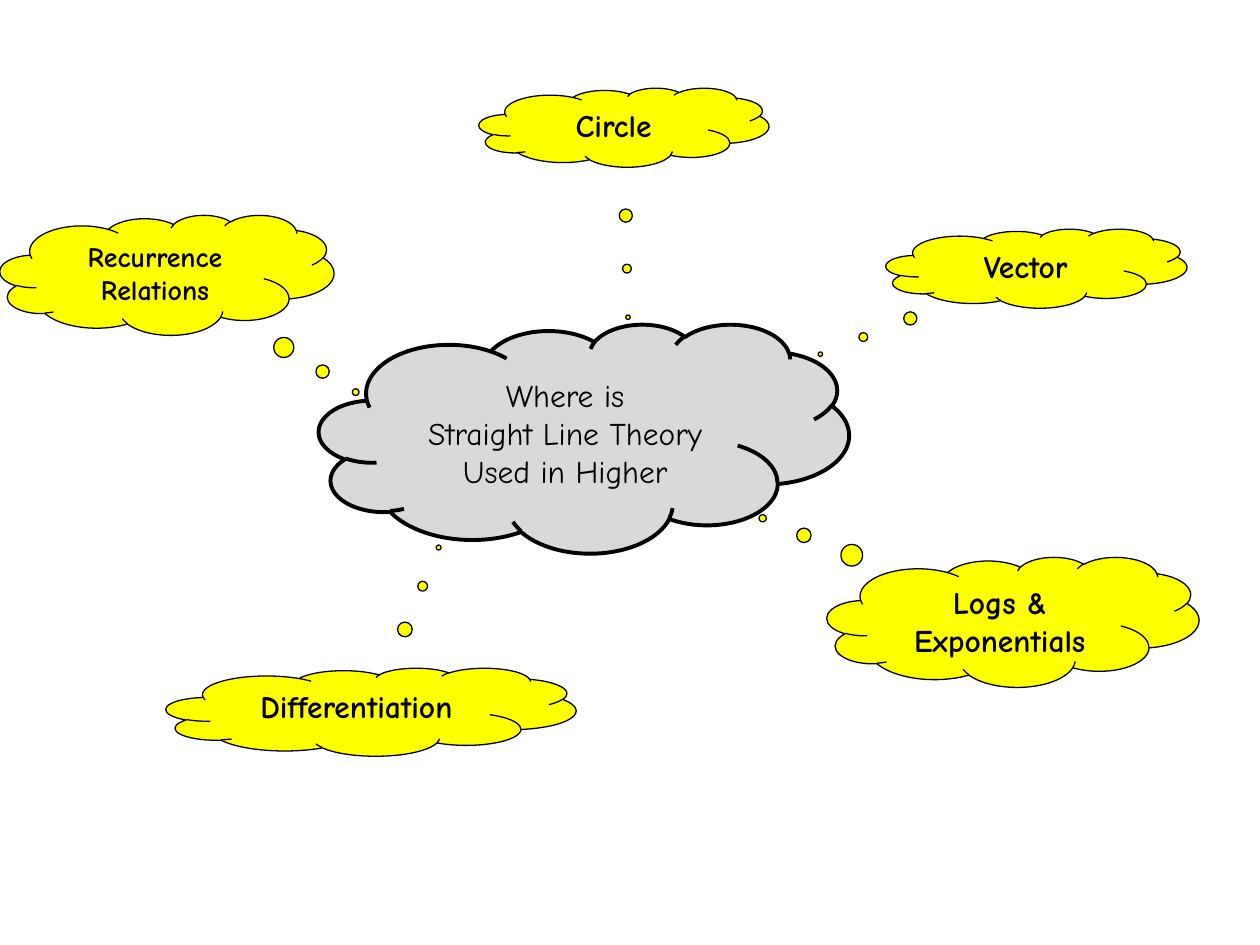
from pptx import Presentation
from pptx.dml.color import RGBColor
from pptx.enum.shapes import MSO_SHAPE
from pptx.enum.text import MSO_ANCHOR, PP_ALIGN
from pptx.util import Emu, Pt

PX = 914400 // 126
FONT = "Comic Neue"
COLORS = {"ink": "000000", "question": "D9D9D9", "topic": "FFFF00"}

QUESTION = ["Where is", "Straight Line Theory", "Used in Higher"]
QUESTION_BOX = (319, 324, 530, 229)

# Topic, box in px, tail end relative to the cloud's centre, text size
TOPICS = [
    ("Recurrence Relations", (0, 215, 334, 120), (0.565, 0.976), 16),
    ("Circle", (479, 88, 290, 79), (0.014, 2.401), 18),
    ("Differentiation", (166, 668, 410, 88), (0.165, -1.869), 18),
    ("Logs & Exponentials", (827, 557, 372, 130), (-0.673, -0.798), 18),
    ("Vector", (886, 229, 301, 79), (-0.718, 1.084), 18),
]


def color(name):
    return RGBColor.from_string(COLORS[name])


def add_cloud(slide, preset, box, lines, fill, line_width, size, bold, anchor):
    cloud = slide.shapes.add_shape(preset, *(Emu(v * PX) for v in box))
    cloud.shadow.inherit = False
    cloud.fill.solid()
    cloud.fill.fore_color.rgb = color(fill)
    cloud.line.color.rgb = color("ink")
    cloud.line.width = Pt(line_width)

    frame = cloud.text_frame
    frame.word_wrap = True
    frame.vertical_anchor = anchor
    for i, line in enumerate(lines):
        paragraph = frame.add_paragraph() if i else frame.paragraphs[0]
        paragraph.alignment = PP_ALIGN.CENTER
        run = paragraph.add_run()
        run.text = line
        run.font.name = FONT
        run.font.size = Pt(size)
        run.font.bold = bold
        run.font.color.rgb = color("ink")
    return cloud


def main():
    deck = Presentation()
    deck.slide_width, deck.slide_height = Emu(1260 * PX), Emu(945 * PX)
    slide = deck.slides.add_slide(deck.slide_layouts[6])

    # Central question
    add_cloud(slide, MSO_SHAPE.CLOUD, QUESTION_BOX, QUESTION, "question",
              2.25, 18, False, MSO_ANCHOR.MIDDLE)

    # Topics, each with a bubble trail to the question
    for topic, box, tail, size in TOPICS:
        cloud = add_cloud(slide, MSO_SHAPE.CLOUD_CALLOUT, box, [topic], "topic",
                          0.75, size, True, MSO_ANCHOR.TOP)
        for i, offset in enumerate(tail):
            cloud.adjustments[i] = offset

    deck.save("out.pptx")


if __name__ == "__main__":
    main()
